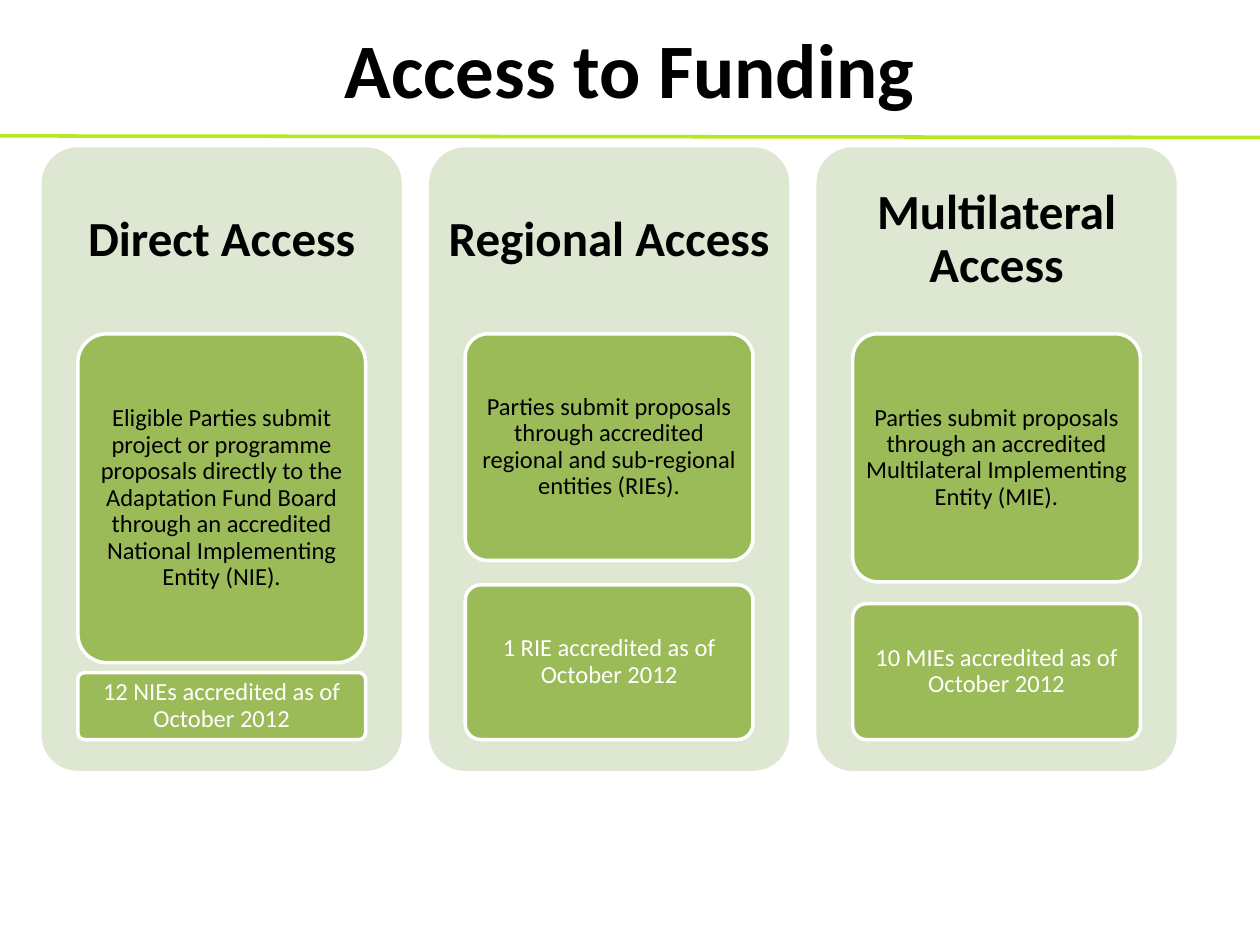
from lxml import etree
from pptx import Presentation
from pptx import util as u
from pptx.dml.color import RGBColor
from pptx.enum import shapes, text
from pptx.oxml.ns import qn

BLACK, WHITE = "000000", "FFFFFF"
PANEL, CARD, RULE = "DEE7D1", "9BBB59", "B7E71F"
PANEL_LEFT, PANEL_TOP, PANEL_PITCH = 0.84, 2.97, 7.81
PANEL_WIDTH, PANEL_HEIGHT, HEADING_HEIGHT = 7.26, 12.57, 3.76
CARD_INDENT, CARD_TOP, CARD_BOTTOM = 0.73, 6.73, 14.91

COLUMNS = [
    ("Direct Access",
     "Eligible Parties submit project or programme proposals directly to the "
     "Adaptation Fund Board through an accredited National Implementing Entity (NIE).",
     6.63, "12 NIEs accredited as of October 2012", 1.35),
    ("Regional Access",
     "Parties submit proposals through accredited regional and sub-regional entities (RIEs).",
     4.57, "1 RIE accredited as of October 2012", 3.12),
    ("Multilateral Access",
     "Parties submit proposals through an accredited Multilateral Implementing Entity (MIE).",
     5.0, "10 MIEs accredited as of October 2012", 2.74),
]


def colour(value):
    return RGBColor.from_string(value)


def write(shape, words, size=14, ink=BLACK, bold=False, spacing=0.9, inset=(0.1, 0.08)):
    frame = shape.text_frame
    frame.word_wrap = True
    frame.vertical_anchor = text.MSO_ANCHOR.MIDDLE
    frame.margin_left = frame.margin_right = u.Cm(inset[0])
    frame.margin_top = frame.margin_bottom = u.Cm(inset[1])
    para = frame.paragraphs[0]
    para.alignment = text.PP_ALIGN.CENTER
    para.line_spacing = spacing
    span = para.add_run()
    span.text = words
    span.font.name = "Calibri"
    span.font.size = u.Pt(size)
    span.font.bold = bold
    span.font.color.rgb = colour(ink)


class Painter:
    def __init__(self, page):
        self.page = page

    def label(self, left, top, width, height, words, **style):
        box = self.page.shapes.add_textbox(*map(u.Cm, (left, top, width, height)))
        write(box, words, **style)

    def rounded(self, left, top, width, height, fill, edge=None):
        shape = self.page.shapes.add_shape(
            shapes.MSO_SHAPE.ROUNDED_RECTANGLE, *map(u.Cm, (left, top, width, height)))
        shape.adjustments[0] = 0.1
        shape.shadow.inherit = False
        shape.fill.solid()
        shape.fill.fore_color.rgb = colour(fill)
        if edge:
            shape.line.color.rgb = colour(edge)
            shape.line.width = u.Pt(2)
        else:
            shape.line.fill.background()
        return shape

    def card(self, left, top, height, words, ink):
        width = PANEL_WIDTH - 2 * CARD_INDENT
        write(self.rounded(left, top, width, height, CARD, WHITE), words, ink=ink)

    def rule(self, *ends):
        line = self.page.shapes.add_connector(
            shapes.MSO_CONNECTOR.STRAIGHT, *map(u.Cm, ends))
        line.line.color.rgb = colour(RULE)
        line.line.width = u.Pt(2)
        etree.SubElement(line._element.spPr, qn("a:effectLst"))

    def column(self, left, heading, route, route_height, status, status_height):
        self.rounded(left, PANEL_TOP, PANEL_WIDTH, PANEL_HEIGHT, PANEL)
        self.label(left, PANEL_TOP, PANEL_WIDTH, HEADING_HEIGHT, heading,
                   size=28, bold=True, inset=(0.3, 0.3))
        card_left = left + CARD_INDENT
        self.card(card_left, CARD_TOP, route_height, route, BLACK)
        self.card(card_left, CARD_BOTTOM - status_height, status_height, status, WHITE)


def main():
    deck = Presentation()
    deck.slide_width, deck.slide_height = u.Cm(25.4), u.Cm(19.05)
    painter = Painter(deck.slides.add_slide(deck.slide_layouts[6]))
    painter.label(1.27, 0, 22.86, 2.74, "Access to Funding",
                  size=44, bold=True, spacing=1.0, inset=(0.25, 0.13))
    painter.rule(0, 2.74, 25.4, 2.77)
    for index, column in enumerate(COLUMNS):
        painter.column(PANEL_LEFT + index * PANEL_PITCH, *column)
    deck.save("out.pptx")


if __name__ == "__main__":
    main()
